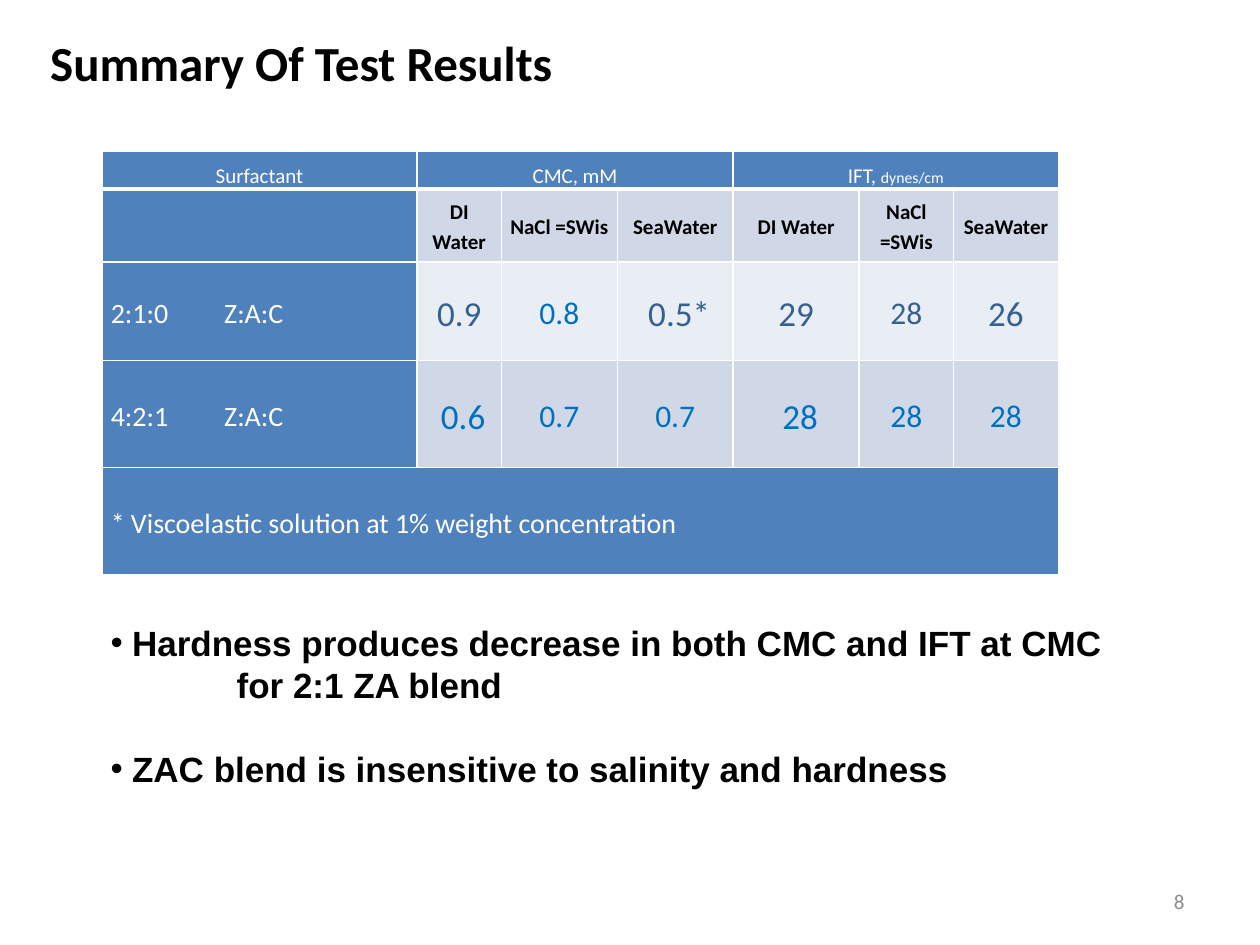
import pptx
import pptx.dml.color
import pptx.enum.text
import pptx.oxml
import pptx.oxml.ns
import pptx.util
from pptx.util import Inches

ALIGN = pptx.enum.text.PP_ALIGN
ANCHOR = pptx.enum.text.MSO_ANCHOR
NAMESPACE = pptx.oxml.ns.nsdecls("a")

BLACK, WHITE, GREY = "000000", "FFFFFF", "8C8C8C"
HEADER, BAND_DARK, BAND_LIGHT = "4F81BD", "D0D8E8", "E9EDF4"
NAVY, BLUE = "376092", "0070C0"

COLUMN_WIDTHS = [2.5, 0.67, 0.92, 0.92, 1, 0.75, 0.83]
ROW_HEIGHTS = [0.3, 0.58, 0.78, 0.85, 0.85]
WATERS = ["DI Water", "NaCl =SWis", "SeaWater"]

# Each result row: label, band fill, then (text, size, colour) per column
RESULTS = [
    ("2:1:0\tZ:A:C", BAND_LIGHT,
     [("0.9", 20, NAVY), ("0.8", 18, BLUE), (" 0.5*", 20, NAVY),
      ("29", 20, NAVY), ("28", 18, NAVY), ("26", 20, NAVY)]),
    ("4:2:1\tZ:A:C", BAND_DARK,
     [(" 0.6", 20, BLUE), ("0.7", 18, BLUE), ("0.7", 18, BLUE),
      (" 28", 20, BLUE), ("28", 18, BLUE), ("28", 18, BLUE)]),
]


def rgb(color):
    return pptx.dml.color.RGBColor.from_string(color)


def add_run(para, text, size, color, bold=False, font="Calibri"):
    span = para.add_run()
    span.text = text
    span.font.size = pptx.util.Pt(size)
    span.font.name = font
    span.font.bold = bold
    span.font.color.rgb = rgb(color)


def add_text_box(page, left, top, width, height, anchor=ANCHOR.TOP):
    box = page.shapes.add_textbox(Inches(left), Inches(top), Inches(width), Inches(height))
    box.text_frame.word_wrap = True
    box.text_frame.vertical_anchor = anchor
    return box.text_frame


def indent_paragraph(para, margin, bullet=False):
    """Set the left margin; a bullet hangs in front of it."""
    properties = para._p.get_or_add_pPr()
    properties.set("marL", str(Inches(margin)))
    properties.set("indent", str(-Inches(margin) if bullet else 0))
    if bullet:
        properties.append(pptx.oxml.parse_xml(f'<a:buFont {NAMESPACE} typeface="Arial"/>'))
        properties.append(pptx.oxml.parse_xml(f'<a:buChar {NAMESPACE} char="•"/>'))


def set_tab_stop(para, position):
    para._p.get_or_add_pPr().append(pptx.oxml.parse_xml(
        f'<a:tabLst {NAMESPACE}><a:tab pos="{Inches(position)}" algn="l"/></a:tabLst>'))


def style_cell(cell, fill, bottom=1):
    """White borders first, then the fill, as the schema orders them."""
    properties = cell._tc.get_or_add_tcPr()
    for side, width in (("L", 1), ("R", 1), ("T", 1), ("B", bottom)):
        properties.append(pptx.oxml.parse_xml(
            f'<a:ln{side} {NAMESPACE} w="{pptx.util.Pt(width)}"><a:solidFill>'
            f'<a:srgbClr val="{WHITE}"/></a:solidFill></a:ln{side}>'))
    cell.fill.solid()
    cell.fill.fore_color.rgb = rgb(fill)


def write_cell(cell, runs, align=ALIGN.CENTER, anchor=ANCHOR.MIDDLE):
    cell.margin_left = cell.margin_right = Inches(0.07)
    cell.margin_top = cell.margin_bottom = 0
    cell.vertical_anchor = anchor
    para = cell.text_frame.paragraphs[0]
    para.alignment = align
    para.line_spacing = 1.15
    para.space_after = pptx.util.Pt(10)
    for run in runs:
        add_run(para, *run)
    return para


def add_results_table(page):
    table = page.shapes.add_table(
        len(ROW_HEIGHTS), len(COLUMN_WIDTHS), Inches(0.81), Inches(1.2),
        Inches(sum(COLUMN_WIDTHS)), Inches(sum(ROW_HEIGHTS))).table
    for column, width in zip(table.columns, COLUMN_WIDTHS):
        column.width = Inches(width)
    for row, height in zip(table.rows, ROW_HEIGHTS):
        row.height = Inches(height)

    # Fills and borders
    bands = [HEADER, BAND_DARK] + [band for _, band, _ in RESULTS] + [HEADER]
    for row, band in enumerate(bands):
        for column in range(len(COLUMN_WIDTHS)):
            style_cell(table.cell(row, column), HEADER if column == 0 else band,
                       bottom=3 if row == 0 else 1)

    # Group headings
    table.cell(0, 1).merge(table.cell(0, 3))
    table.cell(0, 4).merge(table.cell(0, 6))
    headings = {0: [("Surfactant", 12, WHITE)],
                1: [("CMC, mM", 12, WHITE)],
                4: [("IFT, ", 12, WHITE), ("dynes/cm", 9, WHITE)]}
    for column, runs in headings.items():
        write_cell(table.cell(0, column), runs, anchor=ANCHOR.BOTTOM)

    # Water types, once for each group
    for column, water in enumerate(WATERS * 2, start=1):
        write_cell(table.cell(1, column), [(water, 12, BLACK, True)])

    # Results
    for row, (label, _, values) in enumerate(RESULTS, start=2):
        para = write_cell(table.cell(row, 0), [(label, 16, WHITE)], ALIGN.LEFT)
        set_tab_stop(para, 0.9)
        for column, value in enumerate(values, start=1):
            write_cell(table.cell(row, column), [value])

    # Footnote
    table.cell(4, 0).merge(table.cell(4, 6))
    write_cell(table.cell(4, 0),
               [("* Viscoelastic solution at 1% weight concentration", 16, WHITE)], ALIGN.LEFT)


def add_conclusions(page):
    frame = add_text_box(page, 0.78, 4.88, 8.13, 1.45)
    lines = [("Hardness produces decrease in both CMC and IFT at CMC", 0.17, True, 0),
             ("for 2:1 ZA blend", 1, False, 0),
             ("ZAC blend is insensitive to salinity and hardness", 0.17, True, 24)]
    for index, (text, margin, bullet, gap) in enumerate(lines):
        para = frame.add_paragraph() if index else frame.paragraphs[0]
        para.space_before = pptx.util.Pt(gap)
        indent_paragraph(para, margin, bullet)
        add_run(para, text, 20, BLACK, True, "Arial")


def main():
    deck = pptx.Presentation()
    deck.slide_width, deck.slide_height = Inches(10), Inches(7.5)
    page = deck.slides.add_slide(deck.slide_layouts[6])

    # Page number
    number = add_text_box(page, 7.17, 6.95, 2.33, 0.4, ANCHOR.MIDDLE).paragraphs[0]
    number.alignment = ALIGN.RIGHT
    add_run(number, "8", 12, GREY)

    add_results_table(page)

    # Title
    title = add_text_box(page, 0.3, 0.21, 6.62, 0.57).paragraphs[0]
    add_run(title, "Summary Of Test Results", 28, BLACK, True)

    add_conclusions(page)
    deck.save("out.pptx")


if __name__ == "__main__":
    main()
